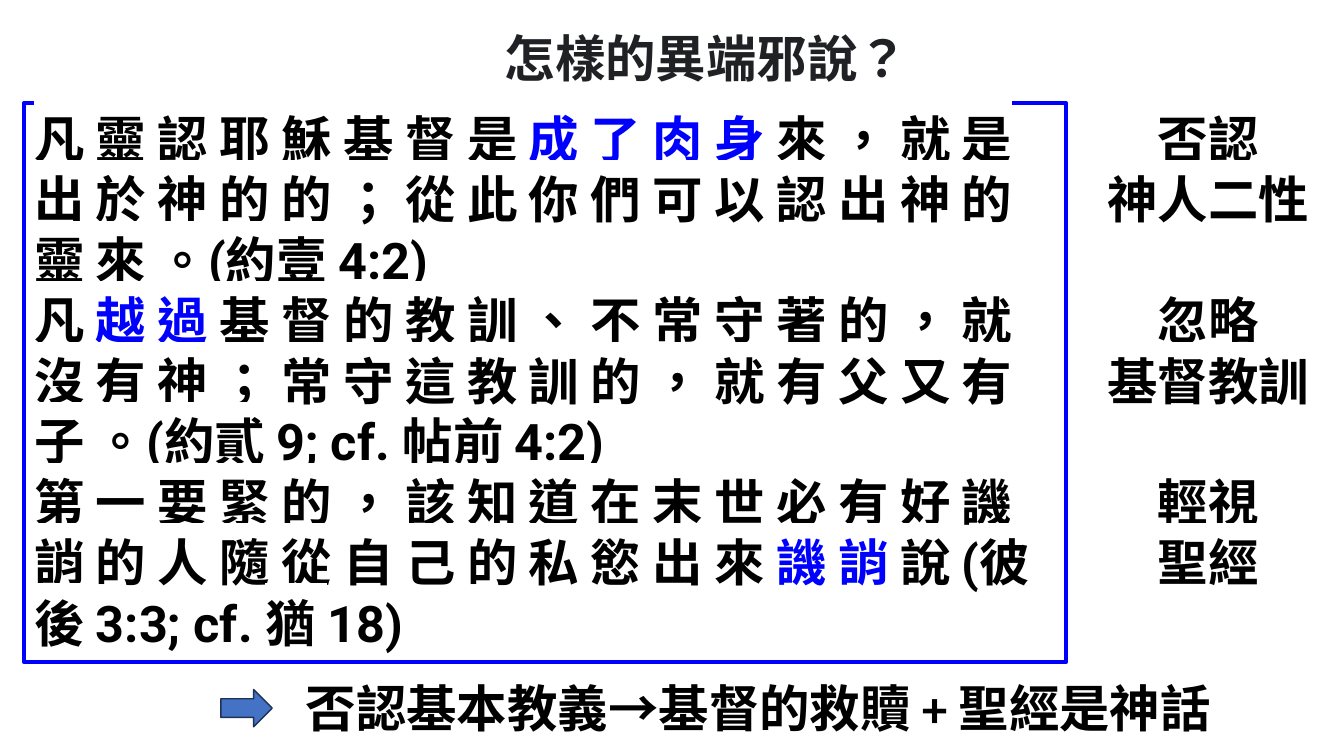
from lxml.etree import SubElement
from pptx import Presentation
from pptx.dml.color import RGBColor as RGB
from pptx.enum.lang import MSO_LANGUAGE_ID as Lang
from pptx.enum.shapes import MSO_SHAPE as Shape
from pptx.enum.text import MSO_ANCHOR as Anchor, MSO_AUTO_SIZE as Auto, PP_ALIGN as Align
from pptx.oxml.ns import qn
from pptx.util import Inches, Pt

BLACK = RGB(0, 0, 0)
INK = RGB(0x20, 0x21, 0x24)
BLUE = RGB(0, 0, 0xFF)
STEEL = RGB(0x44, 0x72, 0xC4)
NAVY = RGB(0x1E, 0x32, 0x56)
WHITE = RGB(0xFF, 0xFF, 0xFF)

VERSES = [
    [("凡 靈 認 耶 穌 基 督 是 ", BLACK, True),
     ("成 了 肉 身 ", BLUE, True),
     ("來 ， 就 是 出 於 神 的 的 ； 從 此 你 們 可 以 認 出 神 的 靈 來 。(約壹 4:2)", BLACK, True)],
    [("凡 ", BLACK, True),
     ("越 過", BLUE, True),
     (" 基 督 的 教 訓 、 不 常 守 著 的 ， 就 沒 有 神 ； 常 守 這 教 訓 的 ， "
      "就 有 父 又 有 子 。(約貳 9; cf. ", BLACK, True),
     ("帖前 4:2", BLACK, False),
     (")", BLACK, True)],
    [("第 一 要 緊 的 ， 該 知 道 在 末 世 必 有 好 譏 誚 的 人 隨 從 自 己 的 私 慾 出 來 ", BLACK, True),
     ("譏 誚", BLUE, True),
     (" 說 (彼後 3:3; cf. 猶 18)", BLACK, True)],
]
ERRORS = [("否認", "神人二性"), ("忽略", "基督教訓"), ("輕視", "聖經")]


def add_run(para, text, color, mark, face):
    run = para.add_run()
    run.text = text
    font = run.font
    font.size, font.bold, font.name = Pt(36), True, face
    font.color.rgb = color
    font.language_id = Lang.TRADITIONAL_CHINESE
    if mark:
        props = run._r.get_or_add_rPr()
        light = SubElement(props, qn("a:highlight"))
        SubElement(light, qn("a:srgbClr")).set("val", str(WHITE))
        props.find(qn("a:solidFill")).addnext(light)


def write(shape, paras, align, face="Roboto"):
    frame = shape.text_frame
    frame.word_wrap = True
    frame.auto_size = Auto.SHAPE_TO_FIT_TEXT
    frame.vertical_anchor = Anchor.TOP
    for i, runs in enumerate(paras):
        para = frame.paragraphs[0] if i == 0 else frame.add_paragraph()
        para.alignment = align
        for text, color, mark in runs:
            add_run(para, text, color, mark, face)


def add_label(slide, box, paras, face="Roboto"):
    label = slide.shapes.add_textbox(*map(Inches, box))
    write(label, paras, Align.CENTER, face)


def add_shape(slide, kind, box, line, width):
    shape = slide.shapes.add_shape(kind, *map(Inches, box))
    shape.shadow.inherit = False
    shape.fill.background()
    shape.line.color.rgb = line
    shape.line.width = Pt(width)
    return shape


def add_verses(slide, box):
    panel = add_shape(slide, Shape.RECTANGLE, box, BLUE, 3)
    write(panel, VERSES, Align.LEFT)


def add_errors(slide, box):
    left, top, width, height = box
    step = height / len(ERRORS)
    for i, lines in enumerate(ERRORS):
        paras = [[(text, BLACK, True)] for text in lines]
        add_label(slide, (left, top + i * step, width, 1.31), paras)


def add_result(slide, box):
    left, top, width, height = box
    arrow = add_shape(slide, Shape.DOWN_ARROW, (left, top + 0.1, 0.37, 0.51), NAVY, 1)
    arrow.rotation = 270
    arrow.fill.solid()
    arrow.fill.fore_color.rgb = STEEL
    add_label(slide, (left + 0.32, top, width - 0.32, height),
              [[("否認基本教義→基督的救贖 + 聖經是神話", BLACK, False)]], "Calibri")


def main():
    deck = Presentation()
    deck.slide_width, deck.slide_height = Inches(13.33), Inches(7.5)
    slide = deck.slides.add_slide(deck.slide_layouts[6])
    add_label(slide, (3.67, 0.22, 6.67, 0.71), [[("怎樣的異端邪說？", INK, True)]])
    add_verses(slide, (0.24, 1.02, 10.33, 5.55))
    add_result(slide, (2.26, 6.67, 10.2, 0.71))
    add_errors(slide, (10.75, 1.02, 2.47, 5.4))
    deck.save("out.pptx")


if __name__ == "__main__":
    main()
